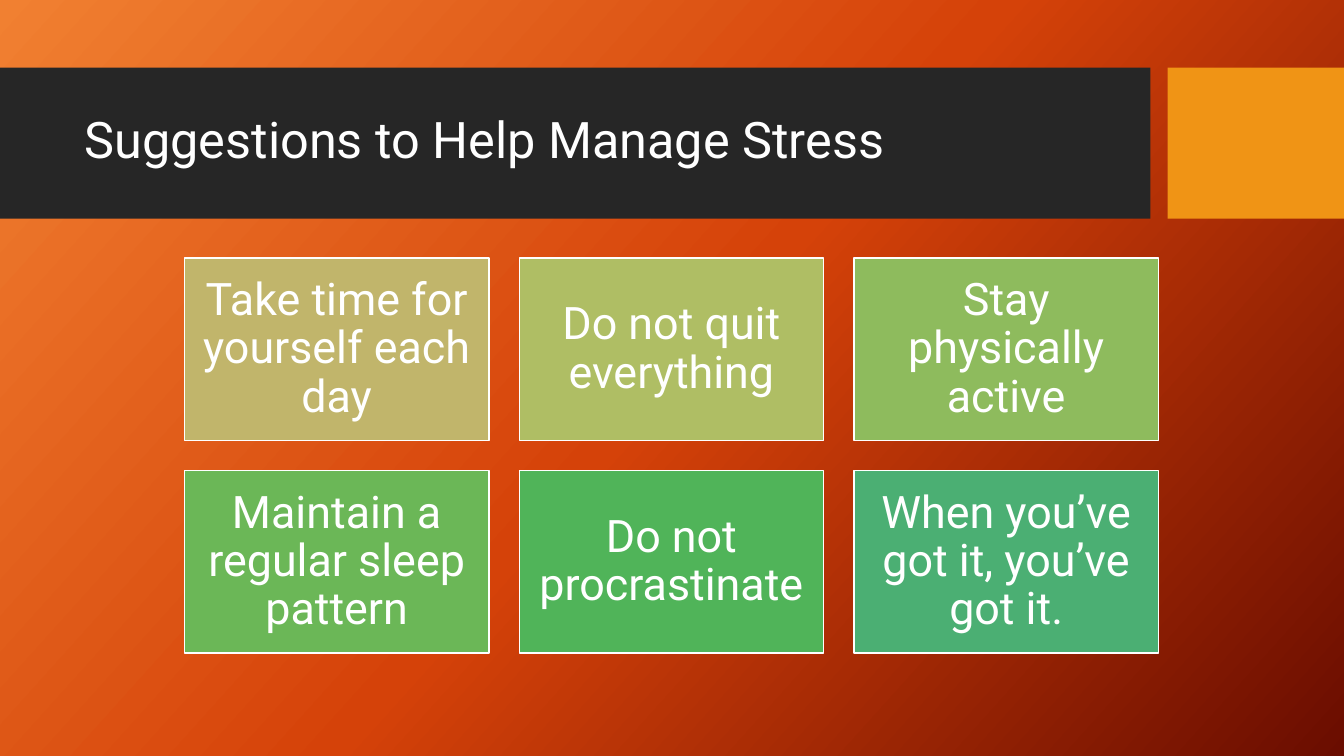
from copy import deepcopy

from pptx import Presentation
from pptx.dml.color import RGBColor as RGB
from pptx.enum.shapes import MSO_SHAPE as SHAPE
from pptx.enum.text import MSO_ANCHOR as ANCHOR, MSO_AUTO_SIZE as FIT, PP_ALIGN as ALIGN
from pptx.oxml.ns import qn
from pptx.util import Inches, Pt

WHITE = RGB(0xFF, 0xFF, 0xFF)
BLACK = RGB(0x26, 0x26, 0x26)
AMBER = RGB(0xF0, 0x94, 0x15)
GLOW = [
    (0, RGB(0xF1, 0x80, 0x31)),
    (0.5, RGB(0xD5, 0x42, 0x09)),
    (1, RGB(0x6A, 0x0D, 0x00)),
]
CARDS = [
    ("Take time for yourself each day", RGB(0xC1, 0xB5, 0x6B)),
    ("Do not quit everything", RGB(0xAF, 0xBE, 0x64)),
    ("Stay physically active", RGB(0x8E, 0xBB, 0x5D)),
    ("Maintain a regular sleep pattern", RGB(0x6B, 0xB7, 0x57)),
    ("Do not procrastinate", RGB(0x50, 0xB4, 0x59)),
    ("When you’ve got it, you’ve got it.", RGB(0x4B, 0xAF, 0x73)),
]
COLS = 3
LEFT, TOP = 1.83, 2.56
WIDE, HIGH = 3.02, 1.81
GAP = 0.3


def apply(item, form):
    """Set each value of a format dict on an item."""
    for name, value in form.items():
        setattr(item, name, value)


def paint(slide):
    """Fill the slide with the three-stop gradient."""
    fill = slide.background.fill
    fill.gradient()
    fill.gradient_angle = 318
    stops = slide.element.find(".//" + qn("a:gsLst"))
    stops.append(deepcopy(stops[-1]))
    for stop, (place, color) in zip(fill.gradient_stops, GLOW):
        stop.color.rgb = color
        stop.position = place


def add_box(slide, spot, color):
    """Add a plain rectangle without a line."""
    box = slide.shapes.add_shape(SHAPE.RECTANGLE, *map(Inches, spot))
    box.shadow.inherit = False
    box.fill.solid()
    box.fill.fore_color.rgb = color
    box.line.fill.background()
    return box


def write(shape, text, size, align, inset):
    """Put one formatted paragraph into a shape."""
    frame = shape.text_frame
    sides = ("left", "top", "right", "bottom")
    apply(frame, {f"margin_{side}": Inches(inset) for side in sides})
    apply(frame, {"word_wrap": True, "auto_size": FIT.NONE, "vertical_anchor": ANCHOR.MIDDLE})
    para = frame.paragraphs[0]
    para.text = text
    apply(para, {"alignment": align, "line_spacing": 0.9})
    apply(para.font, {"name": "Roboto", "size": Pt(size)})
    para.font.color.rgb = WHITE


def add_title(slide):
    """Place the title above its bar."""
    title = slide.shapes.title
    names = ("left", "top", "width", "height")
    apply(title, dict(zip(names, map(Inches, (0.74, 0.82, 10.51, 1.18)))))
    write(title, "Suggestions to Help Manage Stress", 36, ALIGN.LEFT, 0.1)
    slide.shapes.element.append(title.element)


def add_card(slide, index, text, color):
    """Add one tip card at its place in the grid."""
    row, col = divmod(index, COLS)
    spot = (LEFT + col * (WIDE + GAP), TOP + row * (HIGH + GAP), WIDE, HIGH)
    card = add_box(slide, spot, color)
    card.line.color.rgb = WHITE
    card.line.width = Pt(1)
    write(card, text, 32, ALIGN.CENTER, 0.13)


def main():
    """Build and save the slide."""
    deck = Presentation()
    apply(deck, {"slide_width": Inches(13.33), "slide_height": Inches(7.5)})
    slide = deck.slides.add_slide(deck.slide_layouts[5])
    paint(slide)
    add_box(slide, (0, 0.67, 11.41, 1.5), BLACK)
    add_box(slide, (11.58, 0.67, 1.75, 1.5), AMBER)
    add_title(slide)
    for index, (text, color) in enumerate(CARDS):
        add_card(slide, index, text, color)
    deck.save("out.pptx")


if __name__ == "__main__":
    main()
